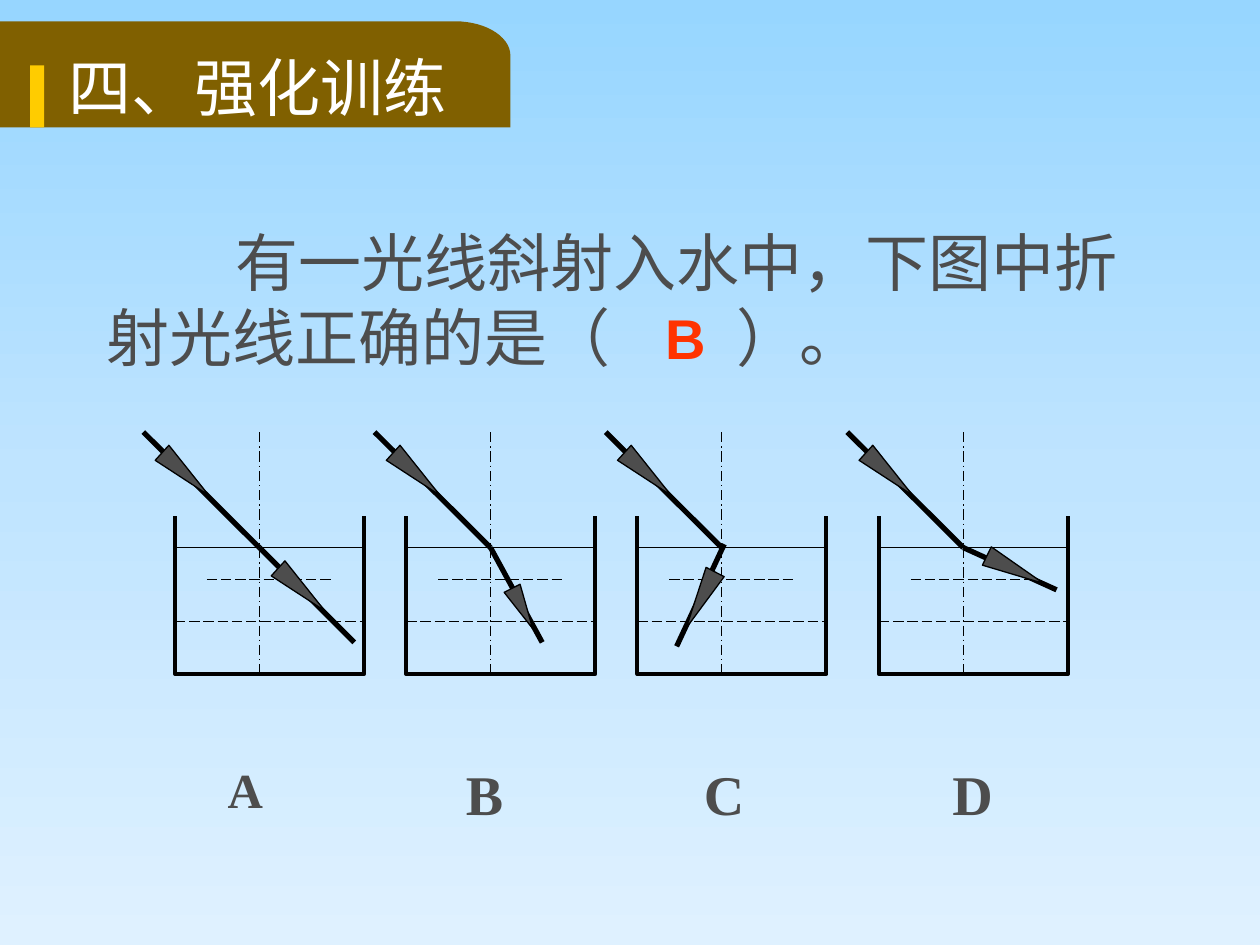
import copy
import math

import pptx
import pptx.dml.color
import pptx.enum.dml
import pptx.enum.shapes
import pptx.enum.text
import pptx.oxml
import pptx.oxml.ns
import pptx.util
from lxml import etree

Cm = pptx.util.Cm
Pt = pptx.util.Pt
qn = pptx.oxml.ns.qn
DASH = pptx.enum.dml.MSO_LINE
SHAPE = pptx.enum.shapes.MSO_SHAPE

COLORS = {
    name: pptx.dml.color.RGBColor.from_string(value)
    for name, value in {
        "sky_top": "97D6FF", "sky_middle": "BFE4FF", "sky_bottom": "DFF1FF",
        "banner": "806000", "accent": "FFCC00", "white": "FFFFFF",
        "text": "4D4D4D", "answer": "FF3300", "black": "000000",
    }.items()
}

deck = pptx.Presentation()
deck.slide_width, deck.slide_height = Cm(25.4), Cm(19.05)
page = deck.slides.add_slide(deck.slide_layouts[5])


def add_ray(start, end, width, dash=None):
    ray = page.shapes.add_connector(
        pptx.enum.shapes.MSO_CONNECTOR.STRAIGHT,
        Cm(start[0]), Cm(start[1]), Cm(end[0]), Cm(end[1]))
    ray.line.color.rgb = COLORS["black"]
    ray.line.width = Pt(width)
    if dash:
        ray.line.dash_style = dash
    etree.SubElement(ray.element.spPr, qn("a:effectLst"))


def write_text(box, place, texts, color, margin_top, spacing, font):
    box.left, box.top, box.width, box.height = [Cm(length) for length in place]
    frame = box.text_frame
    frame_format = {
        "word_wrap": True,
        "auto_size": pptx.enum.text.MSO_AUTO_SIZE.NONE,
        "vertical_anchor": pptx.enum.text.MSO_ANCHOR.TOP,
        "margin_top": Cm(margin_top),
    }
    for name, value in frame_format.items():
        setattr(frame, name, value)
    para = frame.paragraphs[0]
    para.alignment = pptx.enum.text.PP_ALIGN.LEFT
    if spacing:
        para.line_spacing = Pt(spacing)
    for text in texts:
        span = para.add_run()
        span.text = text
        for name, value in font.items():
            setattr(span.font, name, value)
        span.font.color.rgb = COLORS[color]
        if spacing:
            east_asian = etree.SubElement(span.font._element, qn("a:ea"))
            east_asian.set("typeface", "Noto Sans CJK SC")
    return para


sky = page.background.fill
sky.gradient()
sky.gradient_angle = 270
for stop, name, position in zip(sky.gradient_stops, ("sky_top", "sky_bottom"), (0, 1)):
    stop.color.rgb = COLORS[name]
    stop.position = position
stop_list = page.element.find(".//" + qn("a:gsLst"))
stop_list.insert(1, copy.deepcopy(stop_list[0]))
middle = sky.gradient_stops[1]
middle.color.rgb = COLORS["sky_middle"]
middle.position = 0.5

corner = [
    (9.17 + 1.12 * math.sin(math.radians(angle)), 1.12 - 0.69 * math.cos(math.radians(angle)))
    for angle in range(0, 91, 6)
]
outline = page.shapes.build_freeform(Cm(-0.08), Cm(0.43))
outline.add_line_segments(
    [(Cm(x), Cm(y)) for x, y in corner + [(10.29, 2.57), (-0.08, 2.57)]], close=True)
banner = outline.convert_to_shape()
accent = page.shapes.add_shape(SHAPE.RECTANGLE, Cm(0.61), Cm(1.32), Cm(0.28), Cm(1.25))
for block, name in ((banner, "banner"), (accent, "accent")):
    block.shadow.inherit = False
    block.fill.solid()
    block.fill.fore_color.rgb = COLORS[name]
    block.line.fill.background()

title = page.shapes.title
title.element.getparent().append(title.element)
write_text(title, (1.12, 1.04, 9.47, 1.83), ["四、强化训练"], "white", 0.05, 40,
           {"name": "Noto Sans CJK SC", "size": Pt(36), "bold": False})

question = write_text(
    page.shapes.add_textbox(0, 0, 0, 0), (1.9, 4.24, 22.02, 3.51),
    ["有一光线斜射入水中，下图中折射光线正确的是", "（", "）。"], "text", 0.25, 43.4,
    {"name": "Times New Roman", "size": Pt(36), "bold": False})
question._p.get_or_add_pPr().set("indent", str(Cm(2.6)))
opening_bracket = question.runs[1]
opening_bracket.font._element.set("spc", "7200")

AXIS, SURFACE, WALL = 1.7, 11.04, 3.81
panels = [
    ("A", 3.53, 4.34, 28, (AXIS, SURFACE), (3.61, 12.95), (2.34, 11.25, 0.41, 1.27, 132.3)),
    ("B", 8.19, 9.14, 32, (AXIS, SURFACE), (2.74, 12.95), (2.16, 11.81, 0.36, 0.91, 153)),
    ("C", 12.85, 13.94, 32, (1.75, 10.97), (0.79, 13.03), (1.07, 11.46, 0.41, 1.27, 207.3)),
    ("D", 17.72, 18.95, 32, (AXIS, SURFACE), (3.58, 11.89), (2.54, 10.85, 0.41, 1.27, 115.8)),
]
for letter, left, label_left, size, bend, tip, refracted_arrow in panels:
    outline = page.shapes.build_freeform(Cm(left), Cm(10.41))
    outline.add_line_segments(
        [(Cm(left + x), Cm(y)) for x, y in ((0, 13.59), (WALL, 13.59), (WALL, 10.41))],
        close=False)
    tank = outline.convert_to_shape()
    tank.shadow.inherit = False
    tank.fill.background()
    tank.line.color.rgb = COLORS["black"]
    tank.line.width = Pt(2.25)

    for start, end, width, dash in (
        ((0, SURFACE), (WALL, SURFACE), 0.75, None),
        ((0.64, 11.68), (3.18, 11.68), 0.75, DASH.LONG_DASH),
        ((0, 12.53), (WALL, 12.53), 0.75, DASH.LONG_DASH),
        ((AXIS, 8.71), (AXIS, 13.59), 0.75, DASH.LONG_DASH_DOT),
        ((-0.64, 8.71), (AXIS, SURFACE), 3, None),
        (bend, tip, 3, None),
    ):
        add_ray((left + start[0], start[1]), (left + end[0], end[1]), width, dash)

    for x, y, width, height, angle in ((0, 8.92, 0.41, 1.27, 132.3), refracted_arrow):
        arrow = page.shapes.add_shape(
            SHAPE.ISOSCELES_TRIANGLE, Cm(left + x), Cm(y), Cm(width), Cm(height))
        arrow.rotation = angle
        arrow.shadow.inherit = False
        arrow.fill.solid()
        arrow.fill.fore_color.rgb = COLORS["text"]
        arrow.line.color.rgb = COLORS["black"]
        arrow.line.width = Pt(0.75)

    write_text(page.shapes.add_textbox(0, 0, 0, 0), (label_left, 15.19, 1.5, 1.6),
               [letter], "text", 0.13, None,
               {"name": "Times New Roman", "size": Pt(size), "bold": True})

write_text(page.shapes.add_textbox(0, 0, 0, 0), (13.16, 5.99, 1.6, 1.63),
           ["B"], "answer", 0.13, None, {"name": "Arial", "size": Pt(32), "bold": True})

deck.save("out.pptx")
